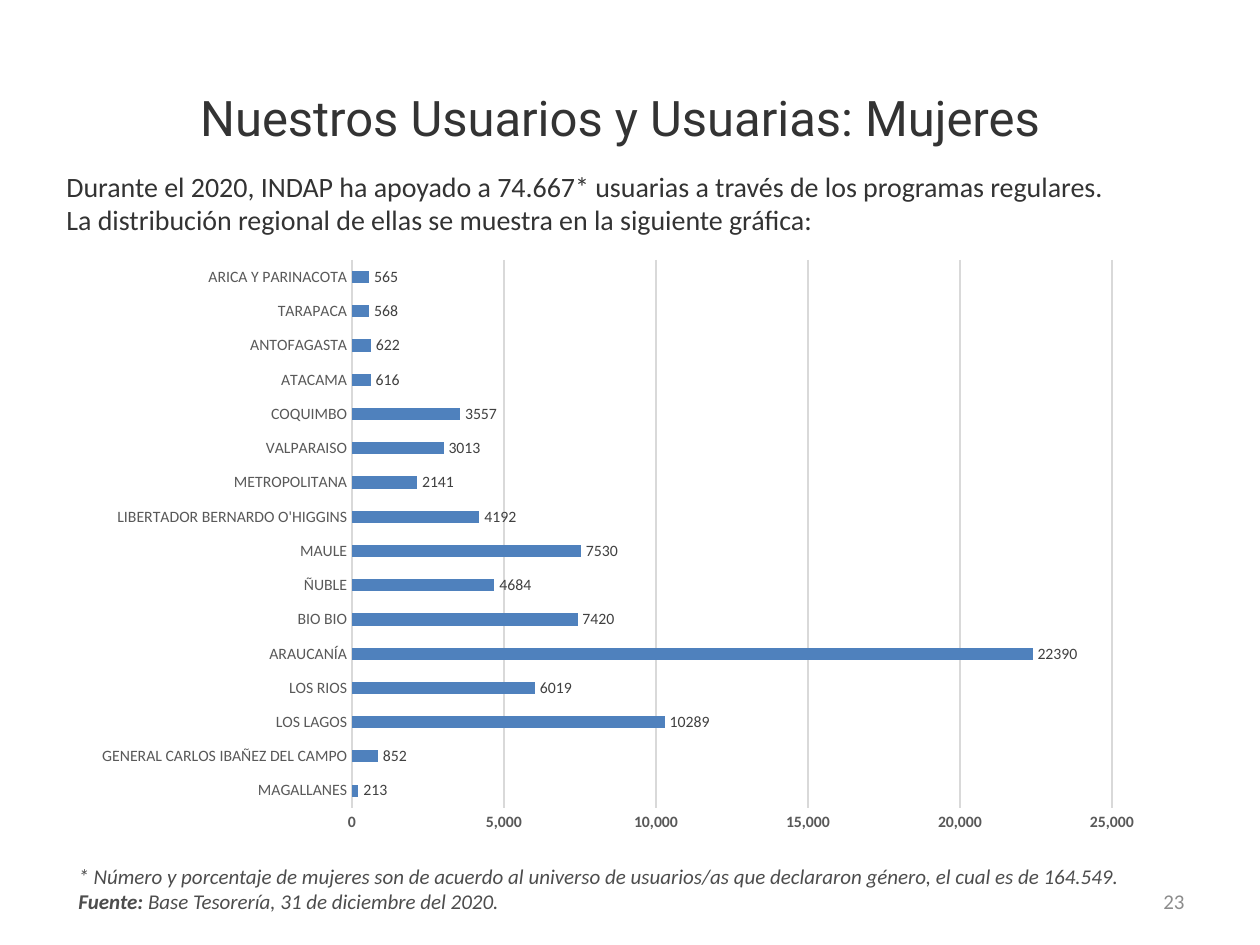
"""Builds the slide on women users by region: title, lead text, bar chart and source note."""
from lxml import etree
from pptx import Presentation
from pptx.chart.data import CategoryChartData
from pptx.dml.color import RGBColor
from pptx.enum.chart import XL_CHART_TYPE, XL_LABEL_POSITION, XL_TICK_MARK
from pptx.enum.text import MSO_ANCHOR, PP_ALIGN
from pptx.oxml.ns import qn
from pptx.util import Emu, Pt

BAR = XL_CHART_TYPE.BAR_CLUSTERED
OUTSIDE = XL_LABEL_POSITION.OUTSIDE_END
NO_TICK = XL_TICK_MARK.NONE
TOP, MIDDLE = MSO_ANCHOR.TOP, MSO_ANCHOR.MIDDLE
CENTER, RIGHT, JUSTIFY = PP_ALIGN.CENTER, PP_ALIGN.RIGHT, PP_ALIGN.JUSTIFY

COLORS = {"text": "333333", "note": "4D4D4D", "number": "8C8C8C", "bar": "4F81BD",
          "axis": "595959", "label": "404040", "grid": "D9D9D9"}

TITLE = [[("Nuestros Usuarios y Usuarias: Mujeres", {})]]
LEAD = [
    [("Durante el 2020, INDAP ha apoyado a 74.667* usuarias a través de los programas regulares.", {})],
    [("La distribución regional de ellas se muestra en la siguiente gráfica:", {})],
]
NOTE = [
    [("* Número y porcentaje de mujeres son de acuerdo al universo de usuarios/as "
      "que declararon género, el cual es de 164.549.", {})],
    [("Fuente: ", {"bold": True}), ("Base Tesorería, 31 de diciembre del 2020.", {})],
]
NUMBER = [[("23", {})]]

TITLE_BOX = (53, 38, 1134, 158)
CHART_BOX = (81, 248, 1075, 595)
PLOT_BOX = (352, 260, 760, 548)
TEXT_BOXES = [
    ((54, 163, 1153, 118), LEAD, JUSTIFY, TOP, {"size": 16, "color": "text"}),
    ((66, 857, 1090, 63), NOTE, JUSTIFY, TOP, {"size": 12, "color": "note", "italic": True}),
    ((903, 876, 294, 50), NUMBER, RIGHT, MIDDLE, {"size": 12, "color": "number"}),
]

USERS = [
    ("ARICA Y PARINACOTA", 565), ("TARAPACA", 568), ("ANTOFAGASTA", 622), ("ATACAMA", 616),
    ("COQUIMBO", 3557), ("VALPARAISO", 3013), ("METROPOLITANA", 2141),
    ("LIBERTADOR BERNARDO O'HIGGINS", 4192), ("MAULE", 7530), ("ÑUBLE", 4684),
    ("BIO BIO", 7420), ("ARAUCANÍA", 22390), ("LOS RIOS", 6019), ("LOS LAGOS", 10289),
    ("GENERAL CARLOS IBAÑEZ DEL CAMPO", 852), ("MAGALLANES", 213),
]


def px(v):
    return Emu(round(v * 914400 / 126))


def rgb(name):
    return RGBColor.from_string(COLORS[name])


def set_font(font, size, color, name="Calibri", **flags):
    font.size, font.name = Pt(size), name
    font.color.rgb = rgb(color)
    for key, value in flags.items():
        setattr(font, key, value)


def write(sp, paragraphs, align, anchor, fmt):
    tf = sp.text_frame
    tf.word_wrap, tf.vertical_anchor = True, anchor
    for i, runs in enumerate(paragraphs):
        p = tf.add_paragraph() if i else tf.paragraphs[0]
        p.alignment = align
        for text, extra in runs:
            r = p.add_run()
            r.text = text
            set_font(r.font, **{**fmt, **extra})


def set_plot_area(chart):
    plot_area = chart.plots[0]._element.getparent()
    for old in plot_area.findall(qn("c:layout")):
        plot_area.remove(old)
    layout = etree.Element(qn("c:layout"))
    manual = etree.SubElement(layout, qn("c:manualLayout"))
    (cx, cy, cw, ch), (x, y, w, h) = CHART_BOX, PLOT_BOX
    values = {"layoutTarget": "inner", "xMode": "edge", "yMode": "edge",
              "x": (x - cx) / cw, "y": (y - cy) / ch, "w": w / cw, "h": h / ch}
    for tag, value in values.items():
        etree.SubElement(manual, qn(f"c:{tag}")).set("val", str(value))
    plot_area.insert(0, layout)


def add_users_chart(s):
    data = CategoryChartData()
    names, values = zip(*reversed(USERS))
    data.categories = names
    data.add_series("Usuarias", values)
    chart = s.shapes.add_chart(BAR, *map(px, CHART_BOX), data).chart
    chart.has_legend = chart.has_title = False
    chart.font.size, chart.font.name = Pt(10), "Calibri"
    set_plot_area(chart)

    plot = chart.plots[0]
    plot.gap_width, plot.vary_by_categories = 182, False
    fill = plot.series[0].format.fill
    fill.solid()
    fill.fore_color.rgb = rgb("bar")
    plot.has_data_labels = True
    labels = plot.data_labels
    labels.show_value, labels.position = True, OUTSIDE
    set_font(labels.font, 9, "label")

    cat, val = chart.category_axis, chart.value_axis
    for axis, bold in ((cat, False), (val, True)):
        axis.major_tick_mark = axis.minor_tick_mark = NO_TICK
        set_font(axis.tick_labels.font, 9, "axis", bold=bold)
    val.minimum_scale, val.maximum_scale, val.major_unit = 0, 25000, 5000
    val.tick_labels.number_format = "#,##0"
    val.tick_labels.number_format_is_linked = False
    val.format.line.fill.background()
    for line in (cat.format.line, val.major_gridlines.format.line):
        line.color.rgb, line.width = rgb("grid"), Pt(0.75)


def main():
    prs = Presentation()
    prs.slide_width, prs.slide_height = px(1260), px(945)
    s = prs.slides.add_slide(prs.slide_layouts[5])
    title = s.shapes.title
    title.left, title.top, title.width, title.height = map(px, TITLE_BOX)
    write(title, TITLE, CENTER, MIDDLE, {"size": 28, "color": "text", "name": "Roboto"})
    for box, paragraphs, align, anchor, fmt in TEXT_BOXES:
        write(s.shapes.add_textbox(*map(px, box)), paragraphs, align, anchor, fmt)
    add_users_chart(s)
    prs.save("out.pptx")


if __name__ == "__main__":
    main()
